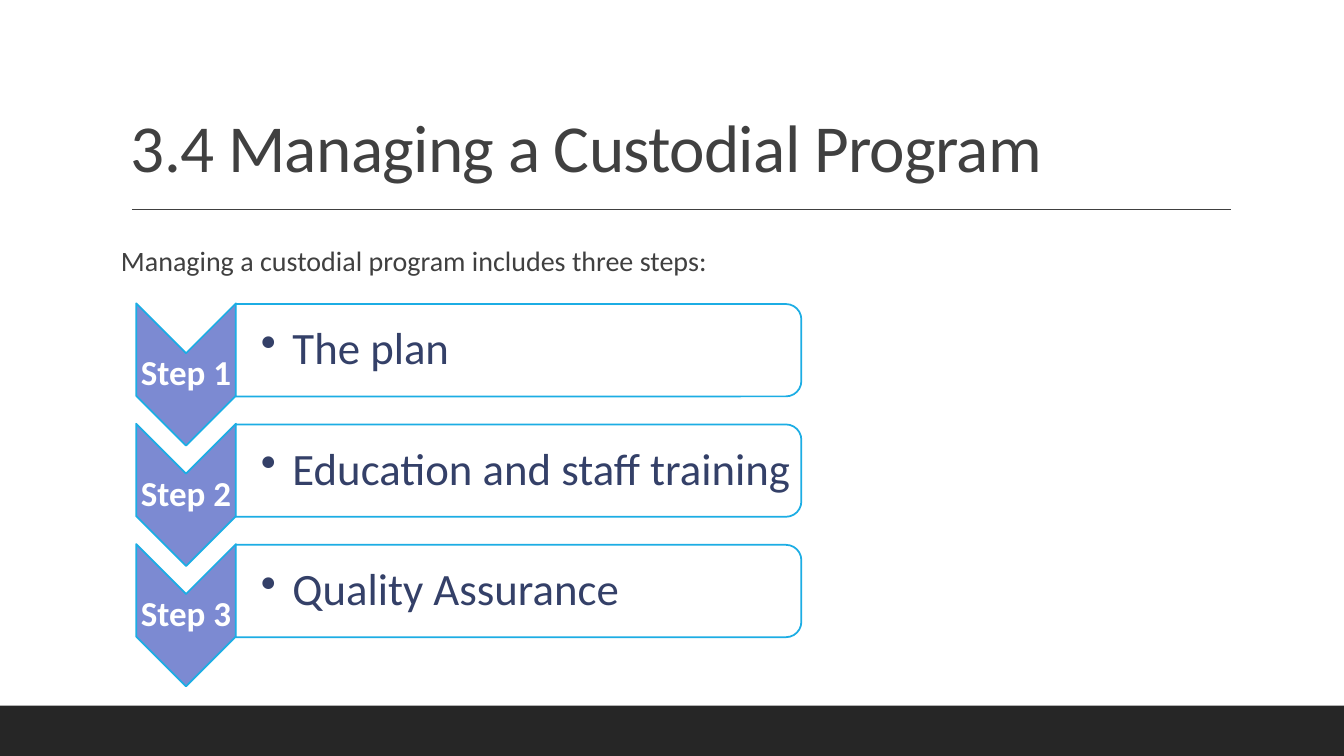
import pptx
import pptx.util
import pptx.dml.color
import pptx.enum.shapes
import pptx.enum.text
import pptx.oxml.ns
import lxml.etree

TITLE = "3.4 Managing a Custodial Program"
INTRO = "Managing a custodial program includes three steps:"
STEPS = [
    ("Step 1", "The plan"),
    ("Step 2", "Education and staff training"),
    ("Step 3", "Quality Assurance"),
]
COLOURS = {
    "footer": "262626",
    "text": "404040",
    "chevron": "7C8AD2",
    "outline": "1CADE4",
    "white": "FFFFFF",
    "item": "344068",
}
FONT = "Calibri"
SLIDE_WIDTH, SLIDE_HEIGHT = 960, 540
FOOTER_TOP = 504
STEP_PITCH = 86
CHEVRON_CENTRE = (132.9, 267.5)
CHEVRON_SIZE = (101.6, 71.2)
PANEL_CENTRE = (370.4, 250.2)
PANEL_SIZE = (66, 404)
LABEL_BOX = (97.3, 252.4, 71.2, 30.4)
ITEM_BOX = (168.4, 220.3, 400.4, 59.8)

Pt = pptx.util.Pt
Shapes = pptx.enum.shapes.MSO_SHAPE
Anchor = pptx.enum.text.MSO_ANCHOR
Align = pptx.enum.text.PP_ALIGN
qn = pptx.oxml.ns.qn


def colour(name):
    return pptx.dml.color.RGBColor.from_string(COLOURS[name])


def add_text(slide, text, box, size, colour_name, insets, anchor=Anchor.TOP):
    text_box = slide.shapes.add_textbox(*map(Pt, box))
    frame = text_box.text_frame
    frame.word_wrap = True
    frame.vertical_anchor = anchor
    frame.margin_left, frame.margin_top, frame.margin_right, frame.margin_bottom = map(Pt, insets)
    paragraph = frame.paragraphs[0]
    paragraph.text = text
    paragraph.line_spacing = 0.9
    paragraph.font.name = FONT
    paragraph.font.size = Pt(size)
    paragraph.font.color.rgb = colour(colour_name)
    return paragraph


def add_filled(slide, kind, box, fill, outline=None):
    shape = slide.shapes.add_shape(kind, *map(Pt, box))
    shape.shadow.inherit = False
    shape.fill.solid()
    shape.fill.fore_color.rgb = colour(fill)
    if outline:
        shape.line.color.rgb = colour(outline)
        shape.line.width = Pt(1.25)
    else:
        shape.line.fill.background()
    return shape


def add_turned(slide, kind, centre, size, offset, fill):
    width, height = size
    box = (centre[0] - width / 2, centre[1] + offset - height / 2, width, height)
    shape = add_filled(slide, kind, box, fill, "outline")
    shape.rotation = 90
    return shape


def add_bullet(paragraph, indent):
    properties = paragraph._p.get_or_add_pPr()
    properties.set("marL", str(Pt(indent)))
    properties.set("indent", str(-Pt(indent)))
    bullet = lxml.etree.Element(qn("a:buChar"), char="•")
    properties.find(qn("a:lnSpc")).addnext(bullet)


def add_step(slide, label, item, offset):
    def moved(box):
        return (box[0], box[1] + offset, box[2], box[3])

    add_turned(slide, Shapes.CHEVRON, CHEVRON_CENTRE, CHEVRON_SIZE, offset, "chevron")
    step = add_text(slide, label, moved(LABEL_BOX), 25, "white", (1.2,) * 4, Anchor.MIDDLE)
    step.alignment = Align.CENTER
    step.font.bold = True

    panel = add_turned(slide, Shapes.ROUND_2_SAME_RECTANGLE, PANEL_CENTRE, PANEL_SIZE, offset, "white")
    fill_colour = panel.fill._xPr.find(qn("a:solidFill"))[0]
    lxml.etree.SubElement(fill_colour, qn("a:alpha"), val="90000")
    entry = add_text(slide, item, moved(ITEM_BOX), 32, "item", (18, 1.2, 1.2, 1.2), Anchor.MIDDLE)
    add_bullet(entry, 22.5)


def main():
    presentation = pptx.Presentation()
    presentation.slide_width = Pt(SLIDE_WIDTH)
    presentation.slide_height = Pt(SLIDE_HEIGHT)
    slide = presentation.slides.add_slide(presentation.slide_layouts[6])

    footer_box = (0, FOOTER_TOP, SLIDE_WIDTH, SLIDE_HEIGHT - FOOTER_TOP)
    add_filled(slide, Shapes.RECTANGLE, footer_box, "footer")

    rule = slide.shapes.add_connector(
        pptx.enum.shapes.MSO_CONNECTOR.STRAIGHT, Pt(94.3), Pt(149.5), Pt(879), Pt(149.5)
    )
    rule.line.color.rgb = colour("text")
    rule.line.width = Pt(1)
    lxml.etree.SubElement(rule._element.spPr, qn("a:effectLst"))

    title = add_text(slide, TITLE, (86.4, 22.3, 792, 114.5), 48, "text", (7.2, 3.6, 7.2, 3.6), Anchor.BOTTOM)
    title.runs[0].font._element.set("spc", "-50")
    intro = add_text(slide, INTRO, (86.4, 170.6, 792, 33), 20, "text", (0, 3.6, 0, 3.6))
    intro.line_spacing = 1.0

    for index, (label, item) in enumerate(STEPS):
        add_step(slide, label, item, index * STEP_PITCH)

    presentation.save("out.pptx")


if __name__ == "__main__":
    main()
